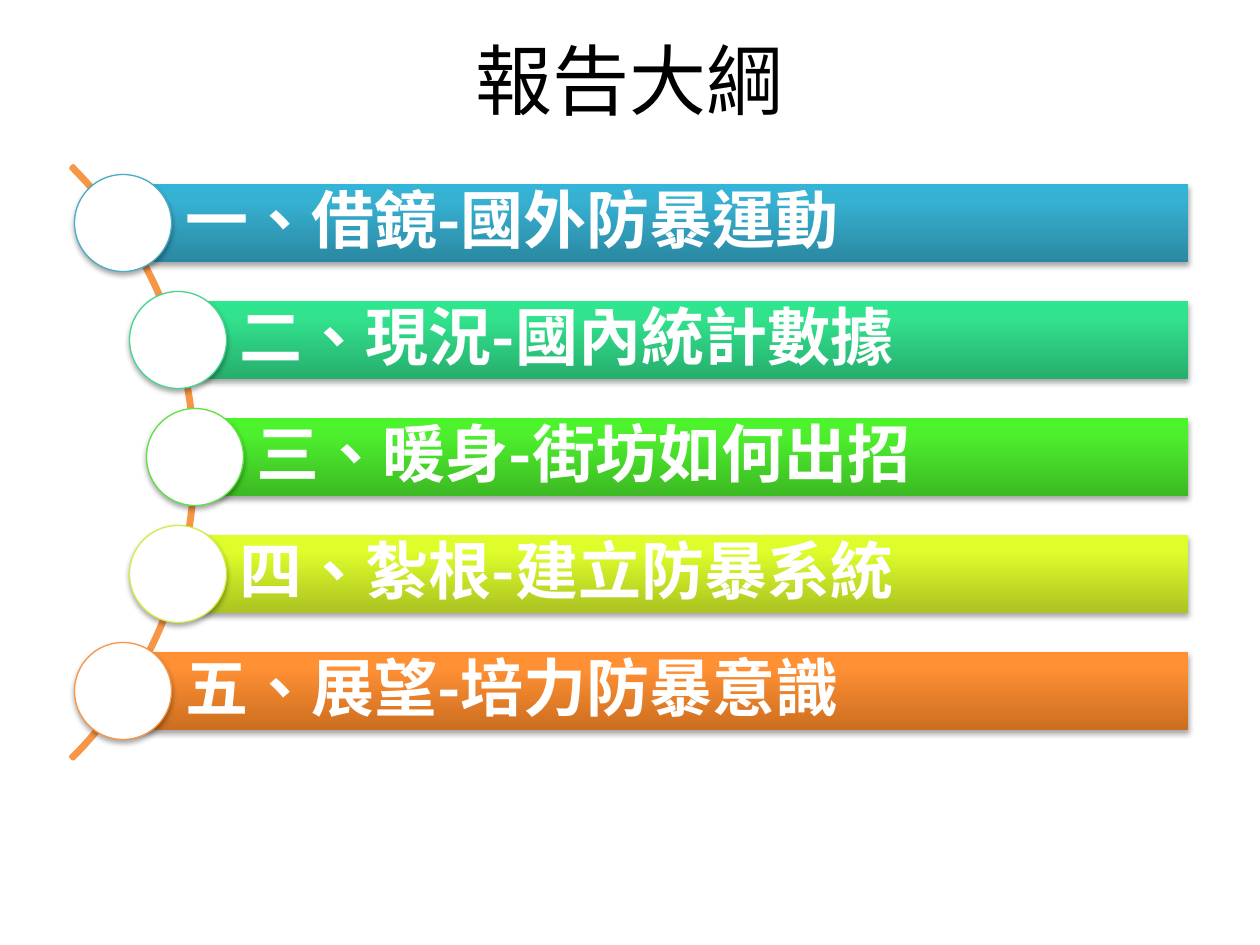
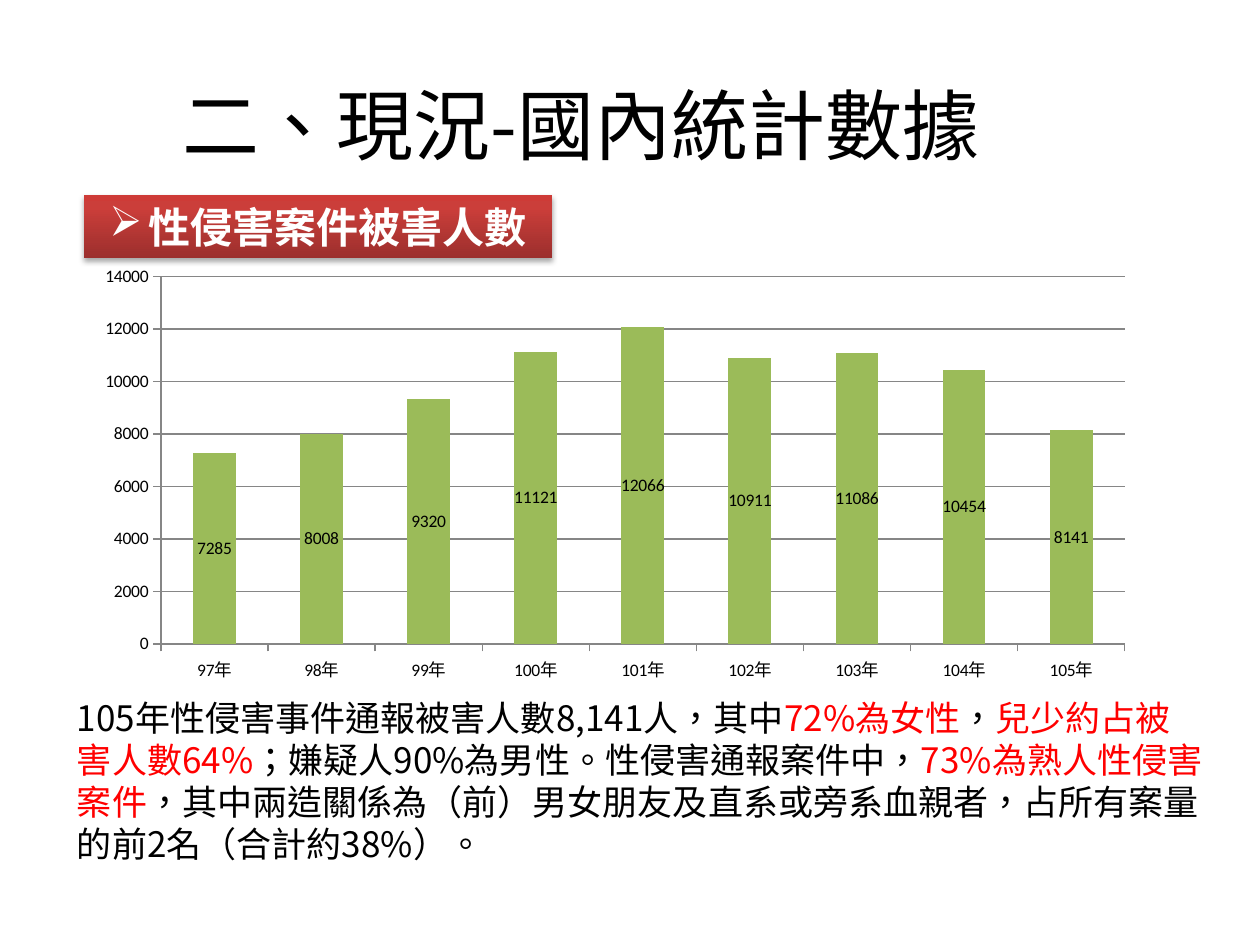
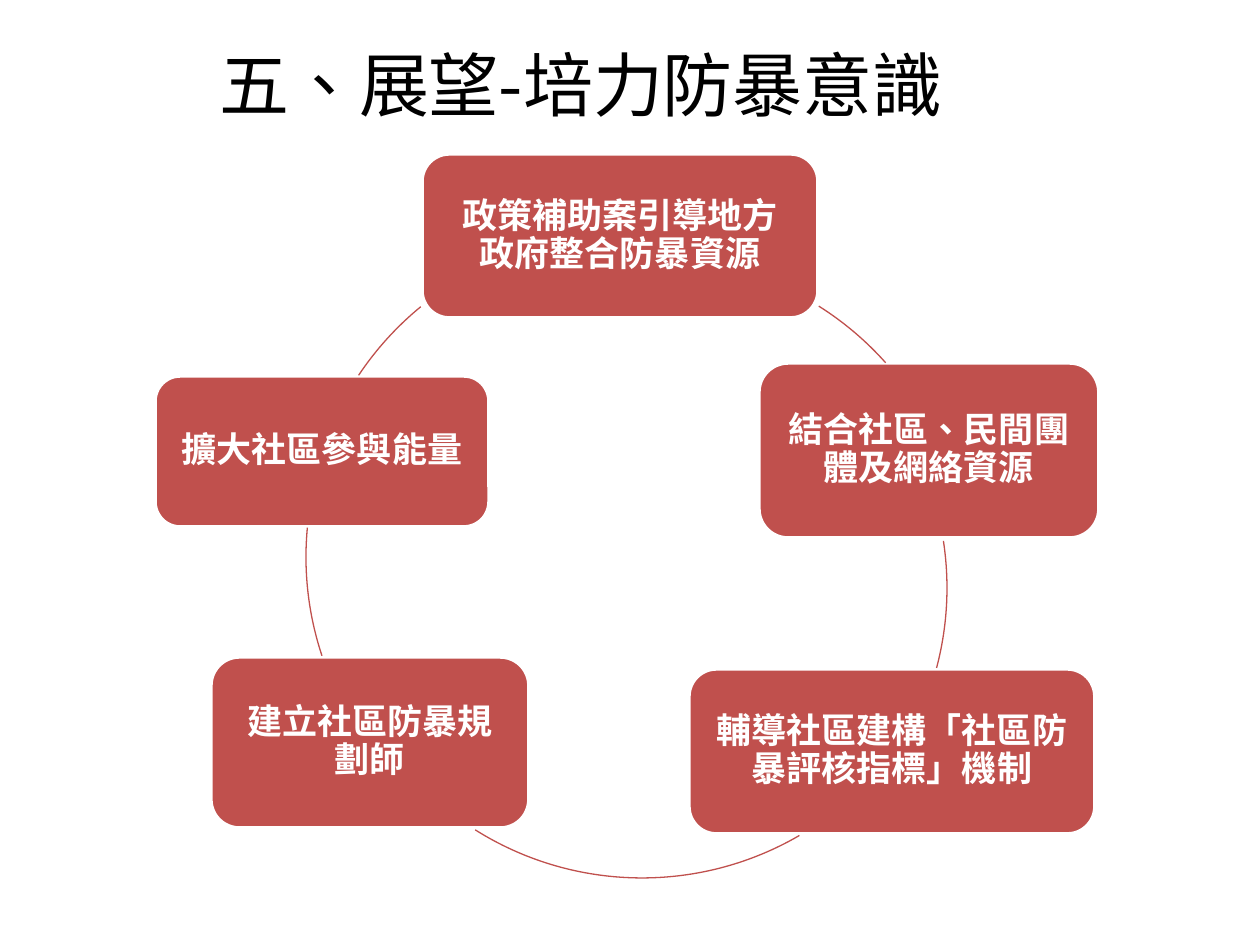
import math

import pptx
import pptx.chart.data
import pptx.dml.color
import pptx.enum.chart
import pptx.enum.shapes
import pptx.enum.text
import pptx.oxml
import pptx.oxml.ns
import pptx.util
from lxml import etree

# Content
OUTLINE_TITLE = "報告大綱"
OUTLINE = [  # text, circle line, gradient from bottom to top
    ("一、借鏡-國外防暴運動", "4BACC6", ("2A88A2", "37B1D2", "34B4D6")),
    ("二、現況-國內統計數據", "48D491", ("26AE6D", "32E28D", "2EE68E")),
    ("三、暖身-街坊如何出招", "60E146", ("3CB923", "4EF02E", "4CF52A")),
    ("四、紮根-建立防暴系統", "D5EC46", ("ACC321", "DFFD2B", "E1FF2B")),
    ("五、展望-培力防暴意識", "F79646", ("CC6E20", "FF9034", "FF9136")),
]
CHART_LABEL = "性侵害案件被害人數"
VICTIMS = {"97年": 7285, "98年": 8008, "99年": 9320, "100年": 11121, "101年": 12066,
           "102年": 10911, "103年": 11086, "104年": 10454, "105年": 8141}
SUMMARY = [  # text, highlighted
    ("105年性侵害事件通報被害人數8,141人，其中", False),
    ("72%為女性", True),
    ("，", False),
    ("兒少約占被害人數64%", True),
    ("；嫌疑人90%為男性。性侵害通報案件中，", False),
    ("73%為熟人性侵害案件", True),
    ("，其中兩造關係為（前）男女朋友及直系或旁系血親者，占所有案量的前2名（合計約38%）。", False),
]
MEASURES = [  # text, box in px
    ("政策補助案引導地方政府整合防暴資源", (422, 154, 396, 164)),
    ("結合社區、民間團體及網絡資源", (759, 363, 340, 175)),
    ("輔導社區建構「社區防暴評核指標」機制", (689, 669, 406, 165)),
    ("建立社區防暴規劃師", (211, 657, 318, 171)),
    ("擴大社區參與能量", (155, 376, 334, 151)),
]
CYCLE_ARCS = [  # left and top of the circle in px, start and end in degrees
    (339, 258, 302.2, 318.3),
    (321, 275, 351.35, 14.8),
    (329, 252, 59.8, 122.2),
    (306, 244, 161.6, 185.4),
    (306, 236, 213.7, 230.7),
]
CYCLE_DIAMETER = 626


class Theme:
    font, chart_font = "Noto Sans CJK SC", "Calibri"
    black, white, highlight = "000000", "FFFFFF", "FF0000"
    arc, bars, grid, box = "F79646", "9BBB59", "868686", "C0504D"
    label = ("9C2F2D", "CB3E3A", "CE3B37")
    title, title_small, band, heading, body, chart = 44, 40, 36, 24, 20, 10


SHAPES = pptx.enum.shapes.MSO_SHAPE
ALIGN = pptx.enum.text.PP_ALIGN
ANCHOR = pptx.enum.text.MSO_ANCHOR
NAMESPACE = pptx.oxml.ns.nsdecls("a")


def px(length):
    return pptx.util.Emu(round(length * 914400 / 126))


def rgb(color):
    return pptx.dml.color.RGBColor.from_string(color)


# Text
def write(shape, text, size=Theme.body, color=Theme.black, bold=False, align=ALIGN.LEFT,
          anchor=ANCHOR.MIDDLE, insets=(13, 6, 13, 6), spacing=None, wrap=True):
    """Write a string, or a list of (string, color) runs, as one paragraph."""
    frame = shape.text_frame
    frame.word_wrap = wrap
    frame.vertical_anchor = anchor
    (frame.margin_left, frame.margin_top,
     frame.margin_right, frame.margin_bottom) = map(px, insets)
    paragraph = frame.paragraphs[0]
    paragraph.alignment = align
    if spacing:
        paragraph.line_spacing = spacing
    for part, part_color in [(text, color)] if isinstance(text, str) else text:
        run = paragraph.add_run()
        run.text = part
        run.font.name = Theme.font
        run.font.size = pptx.util.Pt(size)
        run.font.bold = bold
        run.font.color.rgb = rgb(part_color)
        properties = run.font._element
        properties.set("lang", "zh-TW")
        etree.SubElement(properties, pptx.oxml.ns.qn("a:ea"), typeface=Theme.font)
    return paragraph


def add_text(slide, box, text, **text_format):
    return write(slide.shapes.add_textbox(*map(px, box)), text, **text_format)


def add_title(slide, text, left, top, size=Theme.title):
    add_text(slide, (left, top, 1134, 158), text, size=size, align=ALIGN.CENTER)


# Shapes
def add_shape(slide, kind, box, fill=None, line=None, width=0.75, shadow=False):
    """A fill is one color or a tuple of three for a gradient from the bottom."""
    shape = slide.shapes.add_shape(kind, *map(px, box))
    shape.shadow.inherit = False
    if isinstance(fill, str):
        shape.fill.solid()
        shape.fill.fore_color.rgb = rgb(fill)
    else:
        shape.fill.background()
    if line:
        shape.line.color.rgb = rgb(line)
        shape.line.width = pptx.util.Pt(width)
    else:
        shape.line.fill.background()
    properties = shape._element.spPr
    if isinstance(fill, tuple):
        stops = "".join(f'<a:gs pos="{position}"><a:srgbClr val="{color}"/></a:gs>'
                        for position, color in zip((0, 80000, 100000), fill))
        properties.replace(
            properties.find(pptx.oxml.ns.qn("a:noFill")),
            pptx.oxml.parse_xml(f'<a:gradFill {NAMESPACE} rotWithShape="1"><a:gsLst>{stops}'
                                '</a:gsLst><a:lin ang="16200000" scaled="0"/></a:gradFill>'))
    if shadow:
        properties.find(pptx.oxml.ns.qn("a:effectLst")).append(pptx.oxml.parse_xml(
            f'<a:outerShdw {NAMESPACE} blurRad="40000" dist="23000" dir="5400000" '
            'rotWithShape="0"><a:srgbClr val="000000"><a:alpha val="35000"/>'
            '</a:srgbClr></a:outerShdw>'))
    return shape


# Slides
def build_outline(slide):
    add_title(slide, OUTLINE_TITLE, 63, 0)
    arc = add_shape(slide, SHAPES.BLOCK_ARC, (-643, 43, 839, 839), line=Theme.arc, width=2)
    arc.adjustments[0], arc.adjustments[1], arc.adjustments[2] = 189, 27, 0.004

    # Band starts lie on a circle
    center_x, center_y, radius = -223, 457, 418
    pitch, band_height, diameter, right = 117, 78, 97, 1188
    for index, (text, line, gradient) in enumerate(OUTLINE):
        offset = (index - len(OUTLINE) // 2) * pitch
        left = round(center_x + math.sqrt(radius ** 2 - offset ** 2))
        middle = center_y + offset
        band = add_shape(slide, SHAPES.RECTANGLE,
                         (left, middle - band_height / 2, right - left, band_height),
                         gradient, shadow=True)
        write(band, text, size=Theme.band, color=Theme.white, bold=True,
              insets=(62, 12, 12, 12), spacing=0.9)
        add_shape(slide, SHAPES.OVAL,
                  (left - diameter / 2, middle - diameter / 2, diameter, diameter),
                  Theme.white, line, shadow=True)


def add_victims_chart(slide):
    data = pptx.chart.data.CategoryChartData()
    data.categories = list(VICTIMS)
    data.add_series(CHART_LABEL, list(VICTIMS.values()))
    chart = slide.shapes.add_chart(pptx.enum.chart.XL_CHART_TYPE.COLUMN_STACKED,
                                   *map(px, (84, 258, 1062, 432)), data).chart
    chart.has_title = False
    chart.has_legend = False
    chart.font.name = Theme.chart_font
    chart.font.size = pptx.util.Pt(Theme.chart)
    chart.font.color.rgb = rgb(Theme.black)

    plot = chart.plots[0]
    plot.vary_by_categories = False
    plot.gap_width, plot.overlap = 150, 100
    plot.has_data_labels = True
    plot.data_labels.show_value = True
    plot.data_labels.position = pptx.enum.chart.XL_LABEL_POSITION.CENTER
    fill = plot.series[0].format.fill
    fill.solid()
    fill.fore_color.rgb = rgb(Theme.bars)

    values = chart.value_axis
    values.minimum_scale, values.maximum_scale, values.major_unit = 0, 14000, 2000
    values.has_major_gridlines = True
    for axis in (values, chart.category_axis):
        axis.major_tick_mark = pptx.enum.chart.XL_TICK_MARK.OUTSIDE
    for part in (values, chart.category_axis, values.major_gridlines):
        part.format.line.color.rgb = rgb(Theme.grid)
        part.format.line.width = pptx.util.Pt(0.75)


def build_statistics(slide):
    add_title(slide, OUTLINE[1][0], 14, 45)
    label = add_shape(slide, SHAPES.RECTANGLE, (84, 195, 468, 63), Theme.label, shadow=True)
    paragraph = write(label, CHART_LABEL, size=Theme.heading, color=Theme.white, bold=True,
                      align=ALIGN.CENTER, wrap=False)
    properties = paragraph._p.get_or_add_pPr()
    properties.set("marL", str(px(39)))
    properties.set("indent", str(-px(39)))
    etree.SubElement(properties, pptx.oxml.ns.qn("a:buChar"), char="➢")
    runs = [(text, Theme.highlight if marked else Theme.black) for text, marked in SUMMARY]
    add_text(slide, (64, 690, 1152, 183), runs, anchor=ANCHOR.TOP)
    add_victims_chart(slide)


def build_outlook(slide):
    add_title(slide, OUTLINE[4][0], 14, 4, size=Theme.title_small)
    for text, box in MEASURES:
        measure = add_shape(slide, SHAPES.ROUNDED_RECTANGLE, box, Theme.box, Theme.white, 2)
        write(measure, text, color=Theme.white, bold=True, align=ALIGN.CENTER,
              insets=(18, 18, 18, 18), spacing=0.9)
    for left, top, start, end in CYCLE_ARCS:
        arc = add_shape(slide, SHAPES.ARC, (left, top, CYCLE_DIAMETER, CYCLE_DIAMETER),
                        line=Theme.box)
        # Adjustments count 0.6 per degree
        arc.adjustments[0], arc.adjustments[1] = start * 0.6, end * 0.6


def main():
    presentation = pptx.Presentation()
    presentation.slide_width, presentation.slide_height = px(1260), px(945)
    for build in (build_outline, build_statistics, build_outlook):
        build(presentation.slides.add_slide(presentation.slide_layouts[6]))
    presentation.save("out.pptx")


if __name__ == "__main__":
    main()
